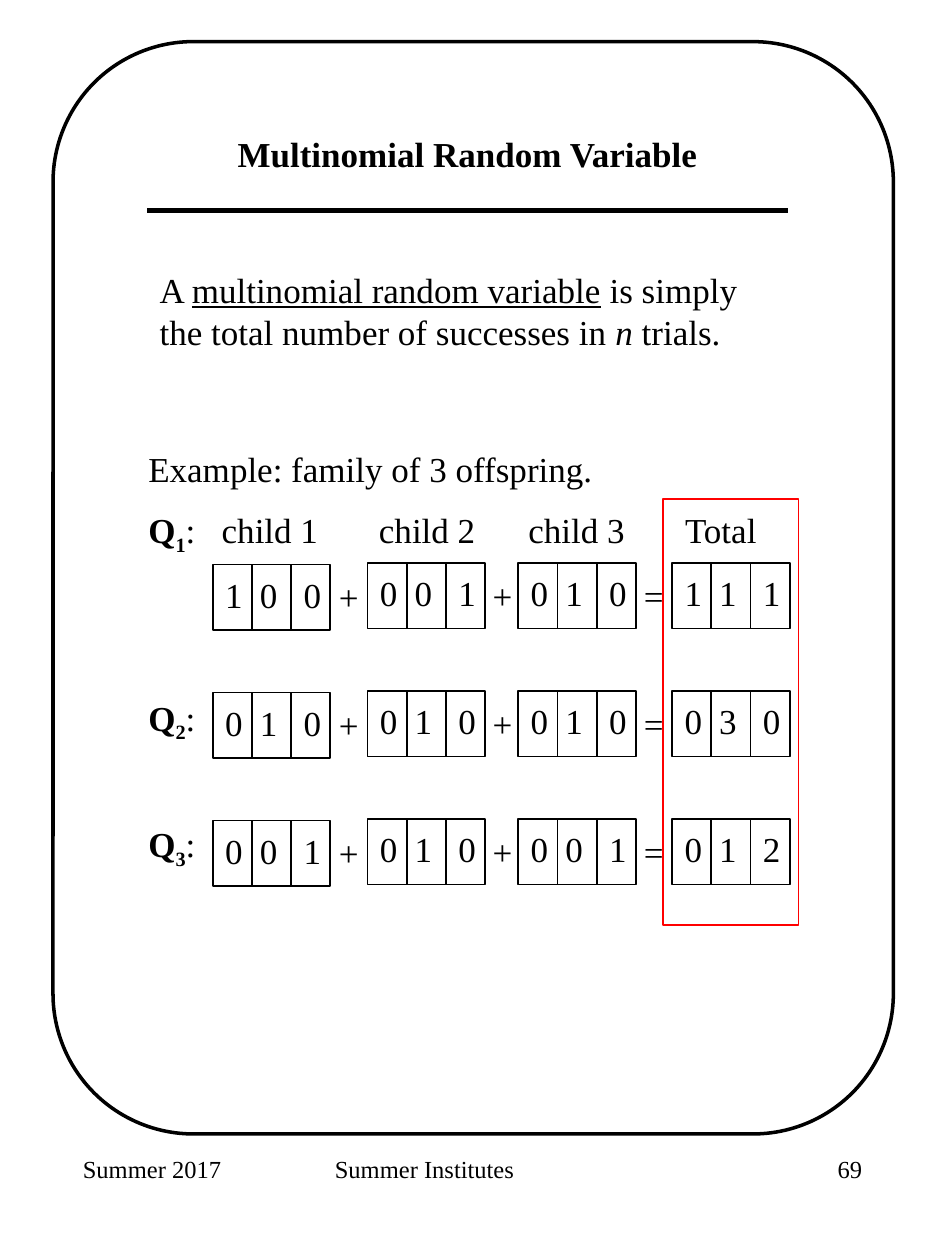
import pptx
import pptx.util
import pptx.dml.color
import pptx.enum.shapes
import pptx.enum.text
import pptx.oxml
import pptx.oxml.ns
import lxml.etree

Cm, Pt = pptx.util.Cm, pptx.util.Pt
SHAPES = pptx.enum.shapes.MSO_SHAPE
ALIGN = pptx.enum.text.PP_ALIGN
COLORS = {"ink": "000000", "highlight": "FF0000"}


def color(name):
    return pptx.dml.color.RGBColor.from_string(COLORS[name])


def add_span(para, text, size=20, font="Times New Roman", ink="ink",
             bold=False, italic=False, underline=False, baseline=0):
    """Append one formatted run to a paragraph."""
    span = para.add_run()
    span.text = text
    span.font.size = Pt(size)
    span.font.name = font
    span.font.color.rgb = color(ink)
    span.font.bold = bold
    span.font.italic = italic
    span.font.underline = underline
    if baseline:
        span.font._element.set("baseline", str(baseline * 1000))


class Page:
    """The current slide, its style and the shapes being added to."""

    def __init__(self, slide):
        self.slide = slide
        self.shapes = slide.shapes

    def start_group(self):
        self.shapes = self.slide.shapes.add_group_shape().shapes

    def end_group(self):
        self.shapes = self.slide.shapes

    def text(self, left, top, width, height, paras, align=ALIGN.LEFT, tabs=()):
        """Each paragraph is (space before in points, [(text, format), ...])."""
        box = self.shapes.add_textbox(Cm(left), Cm(top), Cm(width), Cm(height))
        frame = box.text_frame
        frame.word_wrap = True
        for number, (space, spans) in enumerate(paras):
            para = frame.add_paragraph() if number else frame.paragraphs[0]
            para.alignment = align
            para.space_before = Pt(space)
            if tabs:
                self.tab_stops(para, tabs)
            for text, style in spans:
                add_span(para, text, **style)

    def tab_stops(self, para, tabs):
        name = pptx.oxml.ns.qn
        stops = lxml.etree.SubElement(para._p.get_or_add_pPr(), name("a:tabLst"))
        for position in tabs:
            lxml.etree.SubElement(stops, name("a:tab"),
                                  pos=str(int(Cm(position))), algn="l")

    def label(self, left, top, width, height, text, align=ALIGN.LEFT, tabs=(), **style):
        self.text(left, top, width, height, [(0, [(text, style)])], align, tabs)

    def outline(self, kind, left, top, width, height, weight=1, ink="ink"):
        shape = self.shapes.add_shape(kind, Cm(left), Cm(top), Cm(width), Cm(height))
        shape.shadow.inherit = False
        shape.fill.background()
        shape.line.color.rgb = color(ink)
        shape.line.width = Pt(weight)
        return shape

    def rule(self, left, right, top, weight):
        line = self.shapes.add_connector(pptx.enum.shapes.MSO_CONNECTOR.STRAIGHT,
                                         Cm(left), Cm(top), Cm(right), Cm(top))
        line.line.color.rgb = color("ink")
        line.line.width = Pt(weight)
        lxml.etree.SubElement(line._element.spPr, pptx.oxml.ns.qn("a:effectLst"))

    def vector(self, left, top, width, digits):
        """Three digits in a row of three cells."""
        self.label(left, top + 0.05, width, 1.09, "\t".join(digits), tabs=(0.7, 1.58))
        for index in range(3):
            self.outline(SHAPES.RECTANGLE, left + index * 0.79, top, 0.79, 1.32)


def question(number, space, headings=""):
    return (space, [("Q", {"bold": True}),
                    (str(number), {"bold": True, "baseline": -25}),
                    (":" + headings, {})])


def main():
    deck = pptx.Presentation()
    deck.slide_width, deck.slide_height = Cm(19.05), Cm(25.4)
    page = Page(deck.slides.add_slide(deck.slide_layouts[6]))

    # Frame and footer
    frame = page.outline(SHAPES.ROUNDED_RECTANGLE, 1.07, 0.84, 16.94, 22.02, weight=2)
    frame.adjustments[0] = 0.167
    page.label(1.42, 23.14, 3.96, 1.7, "Summer 2017", size=14)
    page.label(6.5, 23.14, 6.05, 1.7, "Summer Institutes", size=14)
    page.label(13.67, 23.14, 3.96, 1.7, "69", ALIGN.RIGHT, size=14)

    # Title and definition
    page.label(3.61, 2.54, 11.63, 1.09, "Multinomial Random Variable",
               ALIGN.CENTER, bold=True)
    page.rule(2.97, 15.88, 4.24, 3)
    page.text(2.97, 5.28, 13.13, 1.96, [(0, [
        ("A ", {}), ("multinomial random variable", {"underline": True}),
        (" is simply the total number of successes in ", {}),
        ("n", {"italic": True}), (" trials.", {})])])

    # Example, column headings and row labels
    page.text(2.74, 8.89, 13.54, 9.98, [
        (0, [("Example: family of 3 offspring.", {})]),
        question(1, 11, "\tchild 1\tchild 2\tchild 3\tTotal"),
        question(2, 80),
        question(3, 45)], tabs=(1.48, 4.65, 7.66, 10.82))

    # Sums: three children and their total in each row
    sums = [("100", "001", "010", "111"),
            ("010", "010", "010", "030"),
            ("001", "010", "001", "012")]
    columns = [(4.29, 3.4), (7.41, 3.4), (10.45, 2.54), (13.55, 2.9)]
    signs = [(6.58, "+"), (9.68, "+"), (12.73, "=")]
    drops = [0.03, 0, 0, 0]  # the first column sits slightly lower
    for row, vectors in enumerate(sums):
        top = 11.35 + row * 2.58
        page.start_group()
        for (left, sign), drop in zip(signs, drops):
            page.label(left, top + 0.1 + drop, 0.89, 1.09, sign)
        for (left, width), drop, digits in zip(columns, drops, vectors):
            page.vector(left, top + drop, width, digits)
        page.end_group()

    # Highlight around the totals
    page.outline(SHAPES.RECTANGLE, 13.36, 10.06, 2.74, 8.59, ink="highlight")

    deck.save("out.pptx")


if __name__ == "__main__":
    main()
